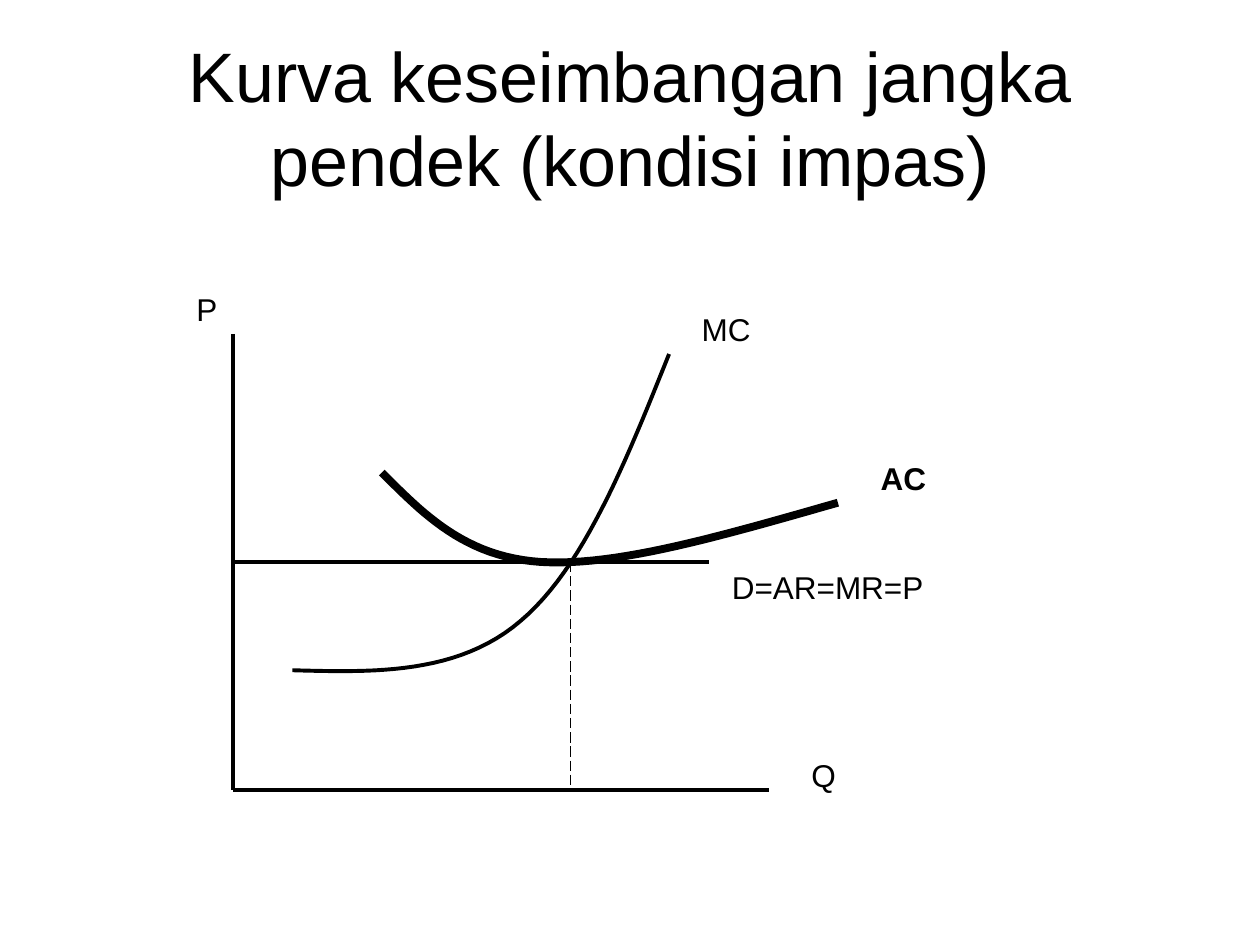
import pptx
import pptx.dml.color
import pptx.enum.dml
import pptx.enum.shapes
import pptx.enum.text
import pptx.util
from dataclasses import dataclass
from pptx.util import Inches
from lxml import etree


@dataclass
class Theme:
    ink: pptx.dml.color.RGBColor = pptx.dml.color.RGBColor(0, 0, 0)
    font: str = "Arial"
    title: int = 40
    label: int = 18
    thin: float = 0.75
    line: float = 2.25
    bold: float = 4.5


theme = Theme()
STEPS = 24  # points per curve segment


def style(run, size, bold=False):
    run.font.name = theme.font
    run.font.size = pptx.util.Pt(size)
    run.font.bold = bold
    run.font.color.rgb = theme.ink


def trace(start, parts):
    """Return points along a chain of cubic Bezier segments."""
    points = [[Inches(v) for v in start]]
    for a, b, end in parts:
        for i in range(1, STEPS + 1):
            t = i / STEPS
            u = 1 - t
            points.append([
                Inches(u**3 * p + 3 * u * u * t * q + 3 * u * t * t * r + t**3 * s)
                for p, q, r, s in zip(start, a, b, end)
            ])
        start = end
    return points


deck = pptx.Presentation()
deck.slide_width, deck.slide_height = Inches(10), Inches(7.5)
slide = deck.slides.add_slide(deck.slide_layouts[5])

title = slide.shapes.title
title.left, title.top = Inches(0.5), Inches(0.3)
title.width, title.height = Inches(9), Inches(1.25)
frame = title.text_frame
frame.text = "Kurva keseimbangan jangka pendek (kondisi impas)"
frame.word_wrap = True
frame.auto_size = pptx.enum.text.MSO_AUTO_SIZE.NONE
frame.vertical_anchor = pptx.enum.text.MSO_ANCHOR.MIDDLE
frame.paragraphs[0].alignment = pptx.enum.text.PP_ALIGN.CENTER
style(frame.paragraphs[0].runs[0], theme.title)

# Axes, price line and the drop to the break-even quantity
left, base, price, even = 1.85, 6.27, 4.46, 4.53
dash = pptx.enum.dml.MSO_LINE.LONG_DASH
for x1, y1, x2, y2, width, kind in [
    (left, 2.65, left, base, theme.line, None),
    (left, base, 6.1, base, theme.line, None),
    (left, price, 5.63, price, theme.line, None),
    (even, price, even, base, theme.thin, dash),
]:
    line = slide.shapes.add_connector(
        pptx.enum.shapes.MSO_CONNECTOR.STRAIGHT,
        Inches(x1), Inches(y1), Inches(x2), Inches(y2))
    line.line.color.rgb = theme.ink
    line.line.width = pptx.util.Pt(width)
    line.line.dash_style = kind
    etree.SubElement(line.element.spPr, pptx.oxml.ns.qn("a:effectLst"))

# Marginal cost, then average cost
for start, parts, width in [
    ((2.32, 5.32), [((2.98, 5.34), (3.64, 5.35), (4.13, 4.93)),
                    ((4.63, 4.51), (4.97, 3.66), (5.31, 2.81))], theme.line),
    ((3.03, 3.75), [((3.36, 4.08), (3.69, 4.42), (4.29, 4.46)),
                    ((4.9, 4.5), (5.77, 4.24), (6.65, 3.99))], theme.bold),
]:
    first, *rest = trace(start, parts)
    path = slide.shapes.build_freeform(*first)
    path.add_line_segments(rest, close=False)
    curve = path.convert_to_shape()
    curve.shadow.inherit = False
    curve.fill.background()
    curve.line.color.rgb = theme.ink
    curve.line.width = pptx.util.Pt(width)

for text, x, y, width, bold in [
    ("AC", 6.89, 3.59, 0.79, True),
    ("D=AR=MR=P", 5.71, 4.46, 2.99, False),
    ("P", 1.46, 2.25, 0.87, False),
    ("Q", 6.34, 5.95, 1.18, False),
    ("MC", 5.47, 2.41, 0.63, False),
]:
    box = slide.shapes.add_textbox(
        Inches(x), Inches(y), Inches(width), Inches(0.4))
    frame = box.text_frame
    frame.word_wrap = True
    frame.auto_size = pptx.enum.text.MSO_AUTO_SIZE.SHAPE_TO_FIT_TEXT
    frame.text = text
    style(frame.paragraphs[0].runs[0], theme.label, bold)

deck.save("out.pptx")
